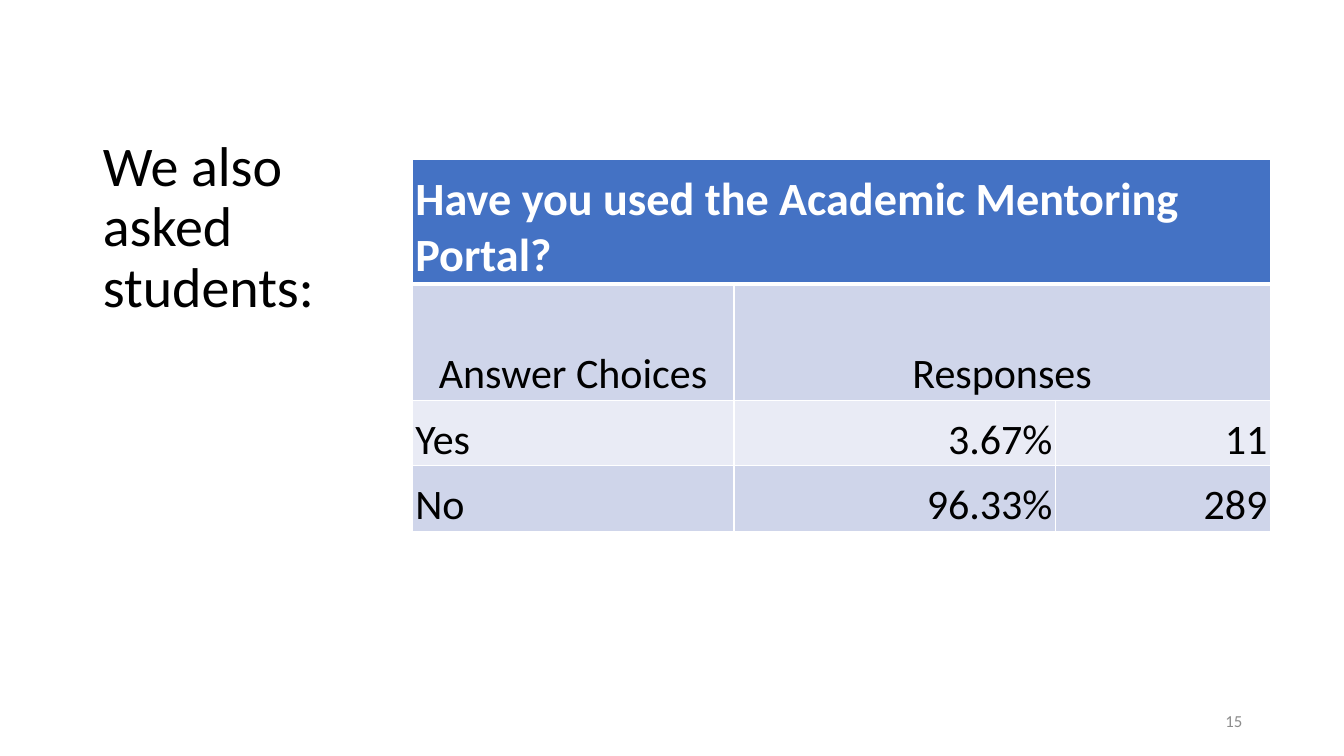
import dataclasses

import lxml.etree
import pptx
import pptx.dml.color
import pptx.enum.text
import pptx.oxml.ns
import pptx.slide
import pptx.table
import pptx.text.text
import pptx.util

EMU_PER_PX = 9144
FONT = "Calibri"
BLACK = pptx.dml.color.RGBColor(0x00, 0x00, 0x00)
WHITE = pptx.dml.color.RGBColor(0xFF, 0xFF, 0xFF)
GRAY = pptx.dml.color.RGBColor(0x8C, 0x8C, 0x8C)
HEADER_BLUE = pptx.dml.color.RGBColor(0x44, 0x72, 0xC4)
DARK_BAND = pptx.dml.color.RGBColor(0xCF, 0xD5, 0xEA)
LIGHT_BAND = pptx.dml.color.RGBColor(0xE9, 0xEB, 0xF5)

LEFT = pptx.enum.text.PP_ALIGN.LEFT
CENTER = pptx.enum.text.PP_ALIGN.CENTER
RIGHT = pptx.enum.text.PP_ALIGN.RIGHT
BOTTOM = pptx.enum.text.MSO_ANCHOR.BOTTOM
MIDDLE = pptx.enum.text.MSO_ANCHOR.MIDDLE

COLUMN_WIDTHS = (319, 319, 213)
THIN, THICK = 1, 3


@dataclasses.dataclass(frozen=True)
class TextStyle:
    size: int
    color: pptx.dml.color.RGBColor
    bold: bool = False


@dataclasses.dataclass(frozen=True)
class SurveyCell:
    text: str
    alignment: pptx.enum.text.PP_ALIGN
    span: int = 1


@dataclasses.dataclass(frozen=True)
class SurveyRow:
    height: int
    fill: pptx.dml.color.RGBColor
    style: TextStyle
    cells: tuple[SurveyCell, ...]
    top_border: int = THIN
    bottom_border: int = THIN


TITLE_STYLE = TextStyle(40, BLACK)
QUESTION_STYLE = TextStyle(33, WHITE, True)
ANSWER_STYLE = TextStyle(30, BLACK)
NUMBER_STYLE = TextStyle(12, GRAY)

SURVEY_ROWS = (
    SurveyRow(124, HEADER_BLUE, QUESTION_STYLE,
              (SurveyCell("Have you used the Academic Mentoring Portal?", LEFT, 3),),
              bottom_border=THICK),
    SurveyRow(115, DARK_BAND, ANSWER_STYLE,
              (SurveyCell("Answer Choices", CENTER), SurveyCell("Responses", CENTER, 2)),
              top_border=THICK),
    SurveyRow(65, LIGHT_BAND, ANSWER_STYLE,
              (SurveyCell("Yes", LEFT), SurveyCell("3.67%", RIGHT), SurveyCell("11", RIGHT))),
    SurveyRow(65, DARK_BAND, ANSWER_STYLE,
              (SurveyCell("No", LEFT), SurveyCell("96.33%", RIGHT), SurveyCell("289", RIGHT))),
)


def px(length: int) -> pptx.util.Emu:
    return pptx.util.Emu(length * EMU_PER_PX)


def write_text(frame: pptx.text.text.TextFrame, text: str, style: TextStyle,
               alignment: pptx.enum.text.PP_ALIGN) -> None:
    paragraph = frame.paragraphs[0]
    paragraph.alignment = alignment
    run = paragraph.add_run()
    run.text = text
    run.font.name = FONT
    run.font.size = pptx.util.Pt(style.size)
    run.font.bold = style.bold
    run.font.color.rgb = style.color


def set_borders(cell: pptx.table._Cell, row: SurveyRow) -> None:
    properties = cell._tc.get_or_add_tcPr()
    borders = (("a:lnL", THIN), ("a:lnR", THIN),
               ("a:lnT", row.top_border), ("a:lnB", row.bottom_border))
    for index, (tag, width) in enumerate(borders):
        line = lxml.etree.Element(pptx.oxml.ns.qn(tag), w=str(pptx.util.Pt(width)))
        fill = lxml.etree.SubElement(line, pptx.oxml.ns.qn("a:solidFill"))
        lxml.etree.SubElement(fill, pptx.oxml.ns.qn("a:srgbClr"), val=str(WHITE))
        properties.insert(index, line)


def add_title(slide: pptx.slide.Slide) -> None:
    title = slide.shapes.title
    title.left, title.top, title.width, title.height = px(92), px(70), px(306), px(252)
    frame = title.text_frame
    frame.word_wrap = True
    frame.auto_size = pptx.enum.text.MSO_AUTO_SIZE.NONE
    frame.vertical_anchor = BOTTOM
    write_text(frame, "We also asked students:", TITLE_STYLE, LEFT)
    frame.paragraphs[0].line_spacing = 0.9


def add_survey_table(slide: pptx.slide.Slide) -> None:
    height = sum(row.height for row in SURVEY_ROWS)
    table = slide.shapes.add_table(
        len(SURVEY_ROWS), len(COLUMN_WIDTHS),
        px(409), px(158), px(sum(COLUMN_WIDTHS)), px(height)).table
    for column, width in zip(table.columns, COLUMN_WIDTHS):
        column.width = px(width)
    for row_index, row in enumerate(SURVEY_ROWS):
        table.rows[row_index].height = px(row.height)
        for column_index in range(len(COLUMN_WIDTHS)):
            cell = table.cell(row_index, column_index)
            cell.fill.solid()
            cell.fill.fore_color.rgb = row.fill
            cell.vertical_anchor = BOTTOM
            cell.margin_left = cell.margin_top = cell.margin_right = px(3)
            cell.margin_bottom = 0
            set_borders(cell, row)
        column_index = 0
        for content in row.cells:
            cell = table.cell(row_index, column_index)
            if content.span > 1:
                cell.merge(table.cell(row_index, column_index + content.span - 1))
            write_text(cell.text_frame, content.text, row.style, content.alignment)
            column_index += content.span


def add_slide_number(slide: pptx.slide.Slide) -> None:
    frame = slide.shapes.add_textbox(px(942), px(695), px(300), px(40)).text_frame
    frame.word_wrap = True
    frame.vertical_anchor = MIDDLE
    write_text(frame, "15", NUMBER_STYLE, RIGHT)


def main() -> None:
    presentation = pptx.Presentation()
    presentation.slide_width, presentation.slide_height = px(1333), px(750)
    slide = presentation.slides.add_slide(presentation.slide_layouts.get_by_name("Title Only"))
    add_title(slide)
    add_survey_table(slide)
    add_slide_number(slide)
    presentation.save("out.pptx")


if __name__ == "__main__":
    main()
